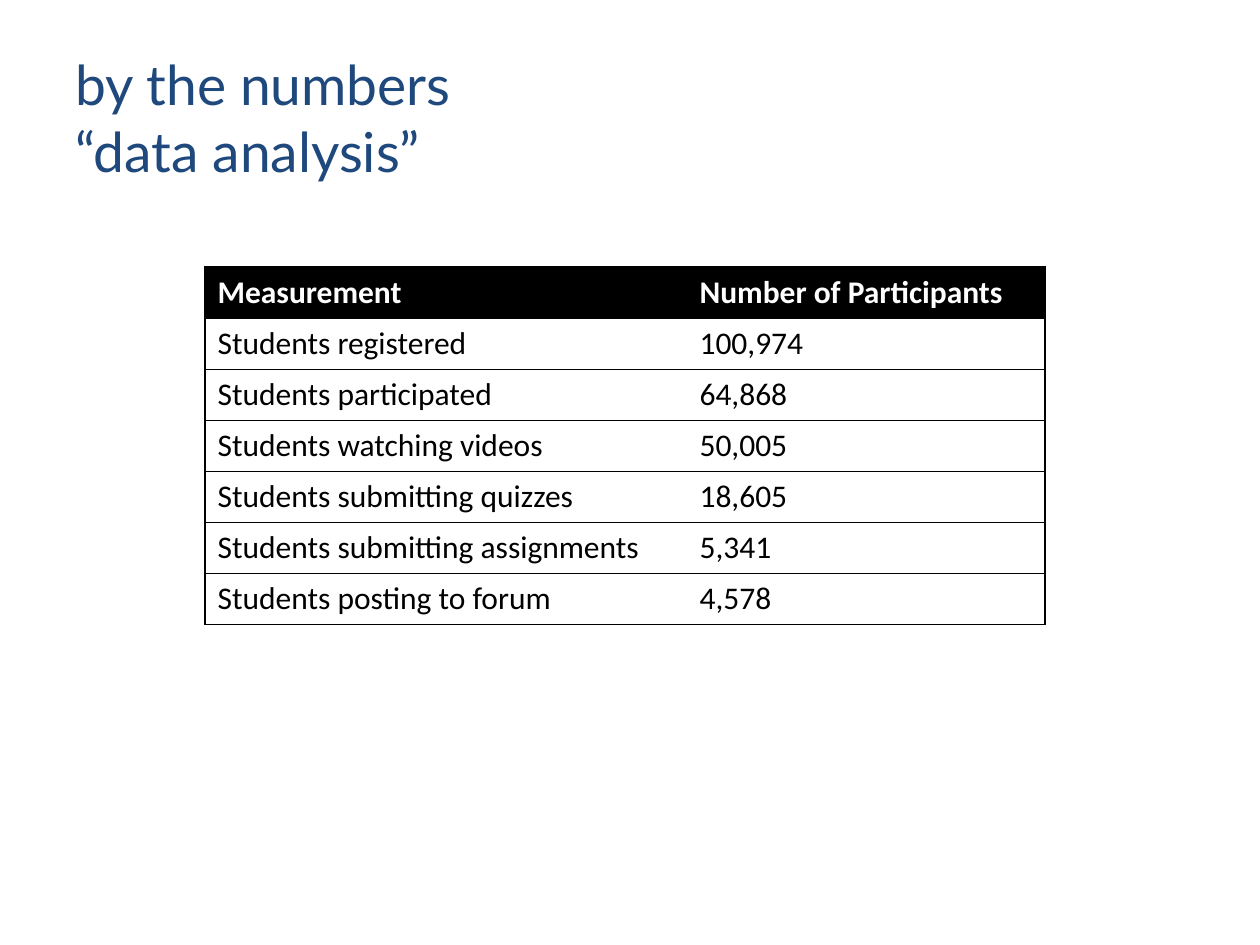
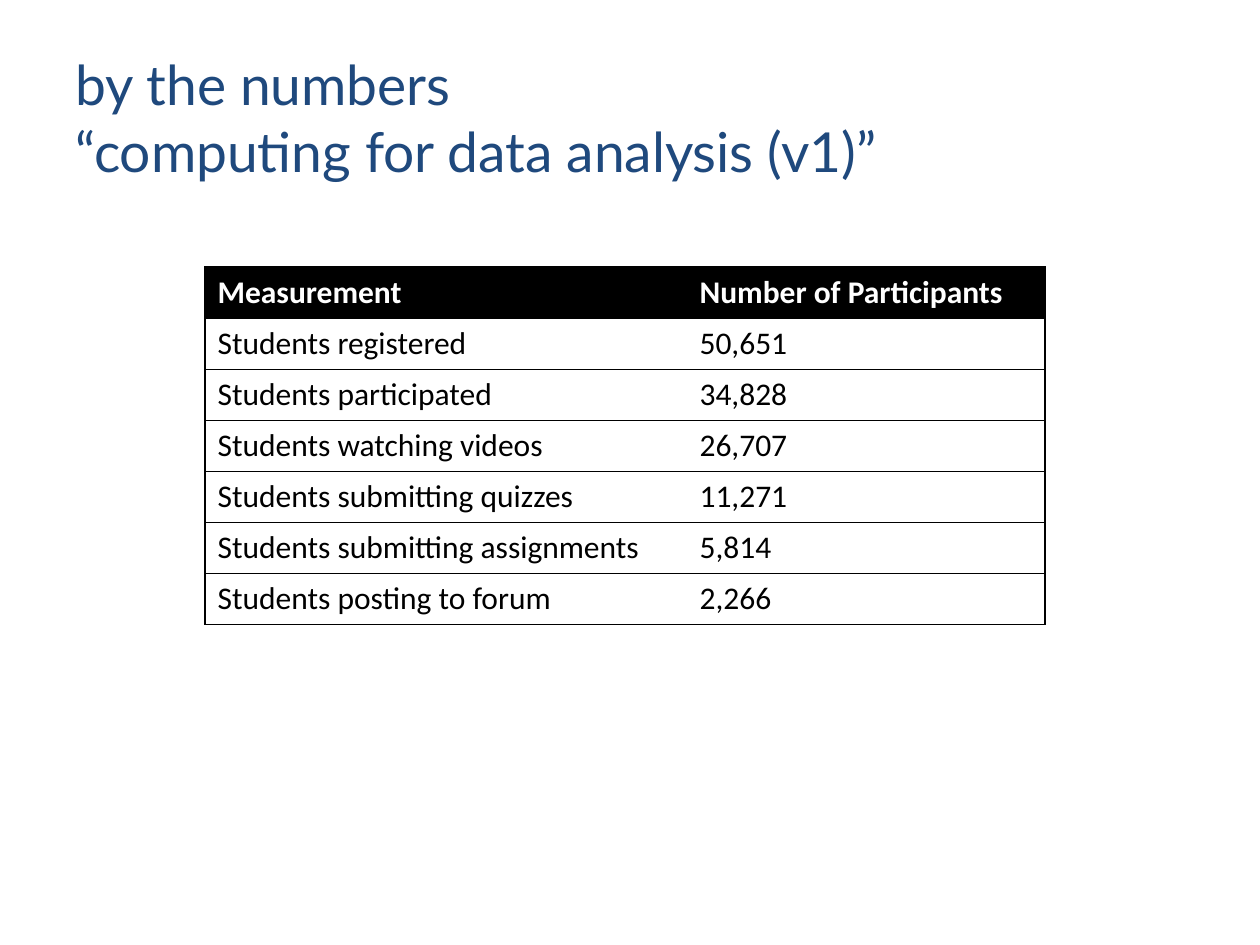
from dataclasses import dataclass

from lxml.etree import SubElement
from pptx import Presentation
from pptx.dml.color import RGBColor
from pptx.enum.text import MSO_ANCHOR as Anchor, MSO_AUTO_SIZE as AutoSize, PP_ALIGN as Align
from pptx.oxml.ns import qn
from pptx.util import Emu, Pt

COLORS = {"title": "1F497D", "ink": "000000", "paper": "FFFFFF"}
TITLE_FONT, TABLE_FONT = "Lato", "Calibri"
EMU_PER_PX = 914400 / 126
SLIDE_WIDTH, SLIDE_HEIGHT = 1260, 945
TITLE_BOX = (63, 38, 1134, 158)
TABLE_LEFT, TABLE_TOP, ROW_HEIGHT = 205, 267, 51
COLUMN_WIDTHS = (482, 358)
BORDER_WIDTH = Pt(0.75)
PLAIN_TABLE_STYLE = "{2D5ABB26-0587-4C30-8999-92F81FD0307C}"
HEADER = ("Measurement", "Number of Participants")
MEASUREMENTS = (
    "Students registered",
    "Students participated",
    "Students watching videos",
    "Students submitting quizzes",
    "Students submitting assignments",
    "Students posting to forum",
)


@dataclass(frozen=True)
class CourseNumbers:
    course: str
    counts: tuple[int, ...]


COURSES = (
    CourseNumbers("data analysis", (100974, 64868, 50005, 18605, 5341, 4578)),
    CourseNumbers("computing for data analysis (v1)", (50651, 34828, 26707, 11271, 5814, 2266)),
)


def px(length: int) -> Emu:
    return Emu(round(length * EMU_PER_PX))


def write_text(frame, text: str, *, font: str, size: float, color: str, bold: bool = False) -> None:
    para = frame.paragraphs[0]
    para.alignment = Align.LEFT
    for index, line in enumerate(text.split("\n")):
        if index:
            para.add_line_break()
        span = para.add_run()
        span.text = line
        span.font.name = font
        span.font.size = Pt(size)
        span.font.bold = bold
        span.font.color.rgb = RGBColor.from_string(COLORS[color])


def add_title(slide, text: str) -> None:
    title = slide.shapes.title
    title.left, title.top, title.width, title.height = map(px, TITLE_BOX)
    frame = title.text_frame
    frame.word_wrap = True
    frame.auto_size = AutoSize.NONE
    frame.vertical_anchor = Anchor.MIDDLE
    write_text(frame, text, font=TITLE_FONT, size=31.5, color="title")


def add_borders(cell, edges: tuple[str, ...]) -> None:
    properties = cell._tc.get_or_add_tcPr()
    for edge in edges:
        line = SubElement(properties, qn(f"a:ln{edge}"), w=str(BORDER_WIDTH))
        fill = SubElement(line, qn("a:solidFill"))
        SubElement(fill, qn("a:srgbClr"), val=COLORS["ink"])


def add_numbers_table(slide, rows: list[tuple[str, str]]) -> None:
    frame = slide.shapes.add_table(
        len(rows), len(HEADER), px(TABLE_LEFT), px(TABLE_TOP),
        px(sum(COLUMN_WIDTHS)), px(ROW_HEIGHT * len(rows)),
    )
    table = frame.table
    table.horz_banding = False
    table._tbl.tblPr.find(qn("a:tableStyleId")).text = PLAIN_TABLE_STYLE
    for column, width in zip(table.columns, COLUMN_WIDTHS):
        column.width = px(width)
    for row_index, values in enumerate(rows):
        table.rows[row_index].height = px(ROW_HEIGHT)
        is_header = row_index == 0
        for column_index, value in enumerate(values):
            cell = table.cell(row_index, column_index)
            outer_edge = "L" if column_index == 0 else "R"
            add_borders(cell, (outer_edge, "T", "B"))
            cell.fill.solid()
            cell.fill.fore_color.rgb = RGBColor.from_string(COLORS["ink" if is_header else "paper"])
            write_text(cell.text_frame, value, font=TABLE_FONT, size=18,
                       color="paper" if is_header else "ink", bold=is_header)


def main() -> None:
    deck = Presentation()
    deck.slide_width, deck.slide_height = px(SLIDE_WIDTH), px(SLIDE_HEIGHT)
    title_only = deck.slide_layouts.get_by_name("Title Only")
    for numbers in COURSES:
        page = deck.slides.add_slide(title_only)
        add_title(page, f"by the numbers\n“{numbers.course}”")
        counts = [f"{count:,}" for count in numbers.counts]
        add_numbers_table(page, [HEADER, *zip(MEASUREMENTS, counts)])
    deck.save("out.pptx")


if __name__ == "__main__":
    main()
